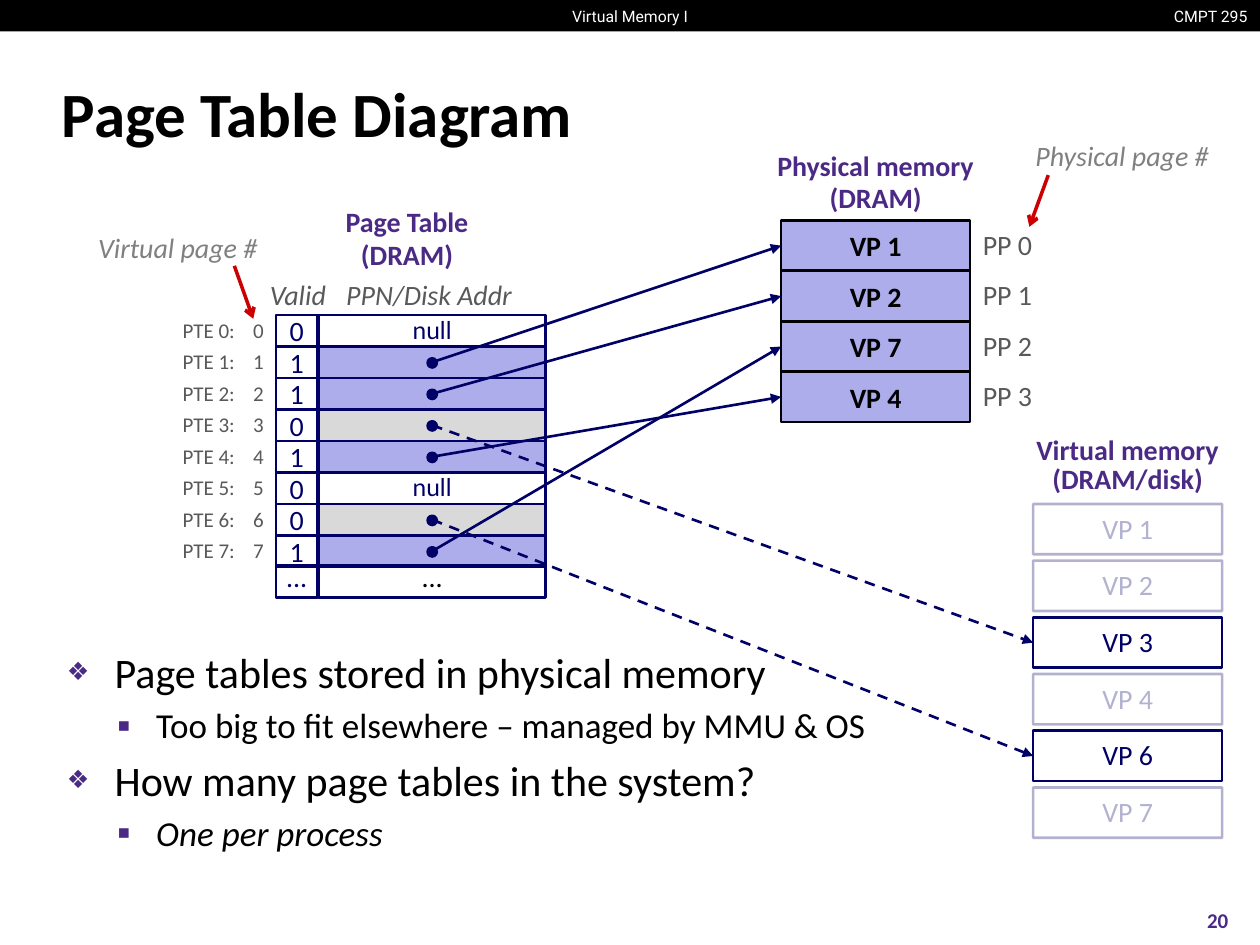
"""Build the page table diagram slide."""
from dataclasses import dataclass
from typing import NamedTuple

from pptx import Presentation
from pptx.dml.color import RGBColor
from pptx.enum.dml import MSO_LINE
from pptx.enum.shapes import MSO_CONNECTOR, MSO_SHAPE
from pptx.enum.text import MSO_ANCHOR, MSO_AUTO_SIZE, PP_ALIGN
from pptx.oxml.ns import qn
from pptx.util import Inches, Pt

LEFT, CENTER, RIGHT = PP_ALIGN.LEFT, PP_ALIGN.CENTER, PP_ALIGN.RIGHT
TOP, MIDDLE = MSO_ANCHOR.TOP, MSO_ANCHOR.MIDDLE
RECTANGLE, OVAL = MSO_SHAPE.RECTANGLE, MSO_SHAPE.OVAL
STRAIGHT, DASH = MSO_CONNECTOR.STRAIGHT, MSO_LINE.DASH
NO_AUTOSIZE = MSO_AUTO_SIZE.NONE


@dataclass(frozen=True)
class Theme:
    """Colours, fonts and type sizes."""
    black: str = "000000"
    white: str = "FFFFFF"
    purple: str = "4B2A85"
    navy: str = "000066"
    lavender: str = "ADADEB"
    silver: str = "D9D9D9"
    dark_gray: str = "595959"
    gray: str = "808080"
    red: str = "CC0000"
    font: str = "Calibri"
    cell_font: str = "Lato"
    header_font: str = "Roboto"
    title_size: int = 36
    body_size: int = 24
    detail_size: int = 20
    label_size: int = 16
    null_size: int = 14
    small_size: int = 12
    header_size: int = 9


class Box(NamedTuple):
    """Left, top, width and height in inches."""
    left: float
    top: float
    width: float
    height: float


class Entry(NamedTuple):
    """One page table entry and the end of its arrow."""
    valid: str
    target: tuple[float, float] | None = None


class Bullet(NamedTuple):
    """One list paragraph."""
    text: str
    level: int = 0
    italic: bool = False


THEME = Theme()
TABLE_LEFT, TABLE_TOP, ROW_HEIGHT = 2.19, 2.5, 0.25
VALID_WIDTH, ADDRESS_LEFT, ADDRESS_WIDTH = 0.33, 2.53, 1.8
DOT_CENTER, DOT_SIZE = 3.43, 0.08
PHYSICAL_LEFT, PHYSICAL_TOP = 6.2, 1.75
VIRTUAL_LEFT, VIRTUAL_TOP, VIRTUAL_STEP = 8.2, 4, 0.45
PAGE_WIDTH, PAGE_HEIGHT = 1.5, 0.4
PHYSICAL_PAGES = (1, 2, 7, 4)
VIRTUAL_PAGES = (1, 2, 3, 4, 6, 7)
DISK_PAGES = (3, 6)


def physical_target(page: int) -> tuple[float, float]:
    """Return the arrow end at a physical page."""
    return PHYSICAL_LEFT, PHYSICAL_TOP + (PHYSICAL_PAGES.index(page) + 0.5) * PAGE_HEIGHT


def disk_target(page: int) -> tuple[float, float]:
    """Return the arrow end at a page on disk."""
    return VIRTUAL_LEFT, VIRTUAL_TOP + VIRTUAL_PAGES.index(page) * VIRTUAL_STEP + PAGE_HEIGHT / 2


ENTRIES = (
    Entry("0"), Entry("1", physical_target(1)), Entry("1", physical_target(2)),
    Entry("0", disk_target(3)), Entry("1", physical_target(4)), Entry("0"),
    Entry("0", disk_target(6)), Entry("1", physical_target(7)),
)
BULLETS = (
    Bullet("Page tables stored in physical memory"),
    Bullet("Too big to fit elsewhere – managed by MMU & OS", 1),
    Bullet("How many page tables in the system?"),
    Bullet("One per process", 1, True),
)


def place(shape, box: Box) -> None:
    """Move and size a shape."""
    shape.left, shape.top, shape.width, shape.height = map(Inches, box)


def write(shape, text: str, *, size: int = THEME.label_size, color: str = THEME.black,
          font: str = THEME.font, bold: bool = False, italic: bool = False,
          align=CENTER, anchor=MIDDLE, wrap: bool = False, spacing: float = 0.98,
          margins: tuple[float, ...] = (0, 0, 0, 0)) -> None:
    """Fill a shape with formatted text."""
    frame = shape.text_frame
    frame.text = text
    frame.auto_size, frame.word_wrap, frame.vertical_anchor = NO_AUTOSIZE, wrap, anchor
    (frame.margin_left, frame.margin_top,
     frame.margin_right, frame.margin_bottom) = map(Inches, margins)
    for paragraph in frame.paragraphs:
        paragraph.alignment, paragraph.line_spacing = align, spacing
        for run in paragraph.runs:
            run.font.size, run.font.name = Pt(size), font
            run.font.bold, run.font.italic = bold, italic
            run.font.color.rgb = RGBColor.from_string(color)


def add_label(slide, box: Box, text: str, **text_format):
    """Add a text box."""
    shape = slide.shapes.add_textbox(*map(Inches, box))
    write(shape, text, **text_format)
    return shape


def add_block(slide, box: Box, text: str = "", *, kind=RECTANGLE, fill: str | None = None,
              line: str = THEME.navy, line_width: float = 1.5, **text_format):
    """Add an outlined shape with optional fill and text."""
    shape = slide.shapes.add_shape(kind, *map(Inches, box))
    shape.shadow.inherit = False
    if fill:
        shape.fill.solid()
        shape.fill.fore_color.rgb = RGBColor.from_string(fill)
    else:
        shape.fill.background()
    shape.line.color.rgb = RGBColor.from_string(line)
    shape.line.width = Pt(line_width)
    if text:
        write(shape, text, **text_format)
    return shape


def add_arrow(slide, start: tuple[float, float], end: tuple[float, float], *,
              color: str = THEME.navy, width: float = 1.5, dashed: bool = False,
              head: str = "triangle") -> None:
    """Add a straight arrow."""
    connector = slide.shapes.add_connector(STRAIGHT, *map(Inches, (*start, *end)))
    connector.line.color.rgb = RGBColor.from_string(color)
    connector.line.width = Pt(width)
    if dashed:
        connector.line.dash_style = DASH
    outline = connector.line._get_or_add_ln()
    outline.append(outline.makeelement(qn("a:tailEnd"), {"type": head}))
    properties = connector._element.spPr
    properties.append(properties.makeelement(qn("a:effectLst"), {}))


def fade(shape, percent: int) -> None:
    """Make the line and text of a shape translucent."""
    for color in shape._element.iter(qn("a:srgbClr")):
        color.append(color.makeelement(qn("a:alpha"), {"val": str(percent * 1000)}))


def add_child(parent, tag: str, **attributes: str):
    """Append a drawing element to a parent."""
    child = parent.makeelement(qn(tag), attributes)
    parent.append(child)
    return child


def draw_header(slide) -> None:
    """Draw the top band, title and page number."""
    add_block(slide, Box(0, 0, 10, 0.25), fill=THEME.black).line.fill.background()
    header = dict(size=THEME.header_size, font=THEME.header_font, color=THEME.white, spacing=1)
    add_label(slide, Box(9, 0, 0.9, 0.25), "CMPT 295", align=RIGHT, wrap=True, **header)
    add_label(slide, Box(4.42, 0, 1.16, 0.25), "Virtual Memory I", **header)
    place(slide.shapes.title, Box(0.39, 0.48, 9.19, 0.83))
    write(slide.shapes.title, "Page Table Diagram", size=THEME.title_size, bold=True,
          align=LEFT, wrap=True, spacing=1, margins=(0.1, 0.05, 0.1, 0.05))
    add_label(slide, Box(9.33, 7.1, 0.67, 0.4), "20", size=THEME.small_size,
              color=THEME.purple, bold=True, spacing=1)


def draw_bullets(slide) -> None:
    """Fill the body placeholder with the list."""
    body = slide.placeholders[1]
    place(body, Box(0.43, 5.08, 7.6, 1.85))
    write(body, "\n".join(bullet.text for bullet in BULLETS), align=LEFT, anchor=TOP,
          wrap=True, spacing=1, margins=(0.1, 0.05, 0.1, 0.05))
    styles = ((THEME.body_size, 0.38, 0.38, "❖", 60), (THEME.detail_size, 0.71, 0.31, "▪", 110))
    for index, (bullet, paragraph) in enumerate(zip(BULLETS, body.text_frame.paragraphs)):
        size, margin, hanging, symbol, percent = styles[bullet.level]
        paragraph.level = bullet.level
        paragraph.space_before = Pt(size * 0.2 if index else 0)
        paragraph.runs[0].font.size = Pt(size)
        paragraph.runs[0].font.italic = bullet.italic
        properties = paragraph._p.get_or_add_pPr()
        properties.set("marL", str(Inches(margin)))
        properties.set("indent", str(-Inches(hanging)))
        add_child(add_child(properties, "a:buClr"), "a:srgbClr", val=THEME.purple)
        add_child(properties, "a:buSzPct", val=str(percent * 1000))
        add_child(properties, "a:buChar", char=symbol)


def draw_page_table(slide) -> None:
    """Draw the page table with its row labels."""
    add_label(slide, Box(2.19, 1.6, 2.08, 0.6), "Page Table\n(DRAM)", color=THEME.purple, bold=True)
    for left, width, text in ((2.2, 0.33, "Valid"), (2.53, 1.75, "PPN/Disk Addr")):
        add_label(slide, Box(left, 2.2, width, 0.3), text, color=THEME.dark_gray, italic=True)
    for index, entry in enumerate(ENTRIES):
        top = TABLE_TOP + index * ROW_HEIGHT
        address = Box(ADDRESS_LEFT, top, ADDRESS_WIDTH, ROW_HEIGHT)
        if entry.target:
            add_block(slide, address, fill=THEME.lavender if entry.valid == "1" else THEME.silver)
            dot = Box(DOT_CENTER - DOT_SIZE / 2, top + 0.09, DOT_SIZE, DOT_SIZE)
            add_block(slide, dot, kind=OVAL, fill=THEME.navy, line_width=1)
        else:
            add_block(slide, address, "null", fill=THEME.white, size=THEME.null_size,
                      font=THEME.cell_font, color=THEME.navy)
        add_block(slide, Box(TABLE_LEFT, top, VALID_WIDTH, ROW_HEIGHT), entry.valid,
                  color=THEME.navy, spacing=1)
        label = add_label(slide, Box(1.3, top, 0.9, ROW_HEIGHT), f"PTE {index}:\t{index}",
                          size=THEME.small_size, color=THEME.dark_gray, align=LEFT,
                          wrap=True, margins=(0.15, 0, 0, 0))
        properties = label.text_frame.paragraphs[0]._p.get_or_add_pPr()
        add_child(add_child(properties, "a:tabLst"), "a:tab", pos=str(Inches(0.56)), algn="l")
    for left, width, color in ((ADDRESS_LEFT, ADDRESS_WIDTH, THEME.black),
                               (TABLE_LEFT, VALID_WIDTH, THEME.navy)):
        add_block(slide, Box(left, 4.49, width, ROW_HEIGHT), "...", color=color, spacing=1,
                  margins=(0, 0, 0, 0.09))


def draw_memories(slide) -> None:
    """Draw physical and virtual memory pages."""
    heading = dict(color=THEME.purple, bold=True)
    add_label(slide, Box(6.2, 1.2, 1.5, 0.5), "Physical memory\n(DRAM)", **heading)
    for index, page in enumerate(PHYSICAL_PAGES):
        top = PHYSICAL_TOP + index * PAGE_HEIGHT
        add_block(slide, Box(PHYSICAL_LEFT, top, PAGE_WIDTH, PAGE_HEIGHT), f"VP {page}",
                  fill=THEME.lavender, line=THEME.black, bold=True, spacing=1)
        add_label(slide, Box(7.7, top, 0.59, PAGE_HEIGHT), f"PP {index}", color=THEME.dark_gray)
    add_label(slide, Box(8.2, 3.45, 1.5, 0.5), "Virtual memory\v(DRAM/disk)", spacing=0.88, **heading)
    for index, page in enumerate(VIRTUAL_PAGES):
        top = VIRTUAL_TOP + index * VIRTUAL_STEP
        block = add_block(slide, Box(VIRTUAL_LEFT, top, PAGE_WIDTH, PAGE_HEIGHT), f"VP {page}",
                          color=THEME.navy)
        if page not in DISK_PAGES:
            fade(block, 30)


def draw_arrows(slide) -> None:
    """Draw the entry arrows and the two callouts."""
    for index, entry in enumerate(ENTRIES):
        if entry.target:
            start = DOT_CENTER, TABLE_TOP + (index + 0.5) * ROW_HEIGHT
            add_arrow(slide, start, entry.target, dashed=entry.valid == "0")
    for box, text, start, end in (
            (Box(0.68, 1.79, 1.51, 0.37), "Virtual page #", (1.86, 2.11), (2.01, 2.53)),
            (Box(8.12, 1.06, 1.6, 0.37), "Physical page #", (8.32, 1.39), (8.17, 1.8))):
        add_arrow(slide, start, end, color=THEME.red, width=2, head="arrow")
        add_label(slide, box, text, color=THEME.gray, italic=True, align=LEFT, anchor=TOP,
                  wrap=True, margins=(0.1, 0.05, 0.1, 0.05))


def main() -> None:
    """Build and save the presentation."""
    presentation = Presentation()
    presentation.slide_width, presentation.slide_height = Inches(10), Inches(7.5)
    slide = presentation.slides.add_slide(presentation.slide_layouts[1])
    for draw in (draw_header, draw_bullets, draw_page_table, draw_memories, draw_arrows):
        draw(slide)
    presentation.save("out.pptx")


if __name__ == "__main__":
    main()
